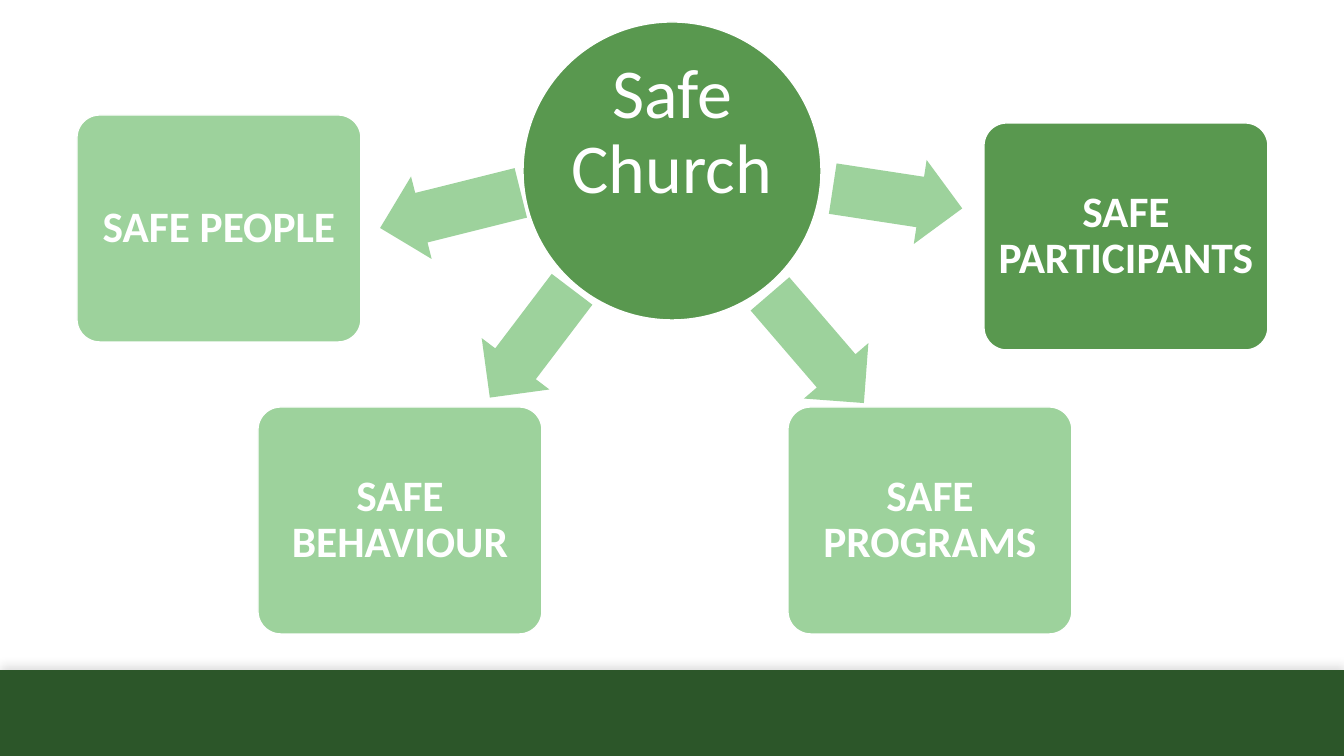
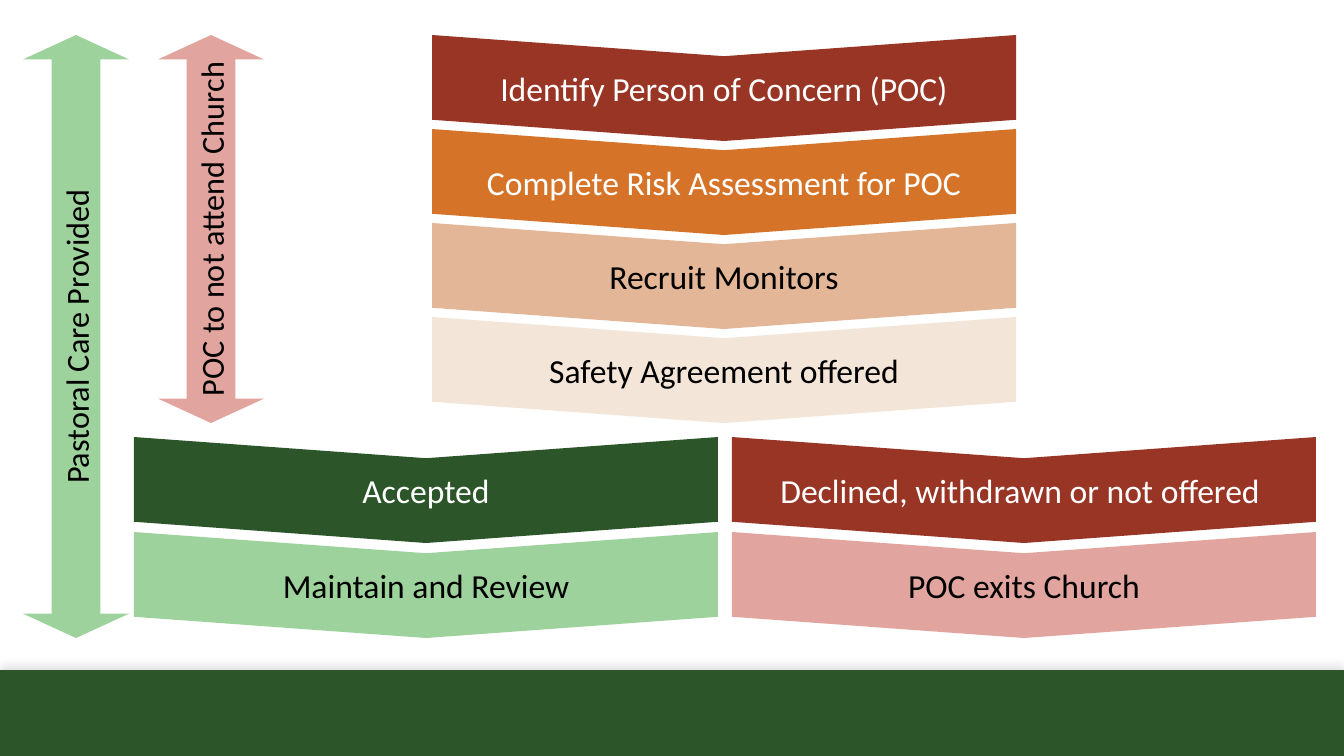
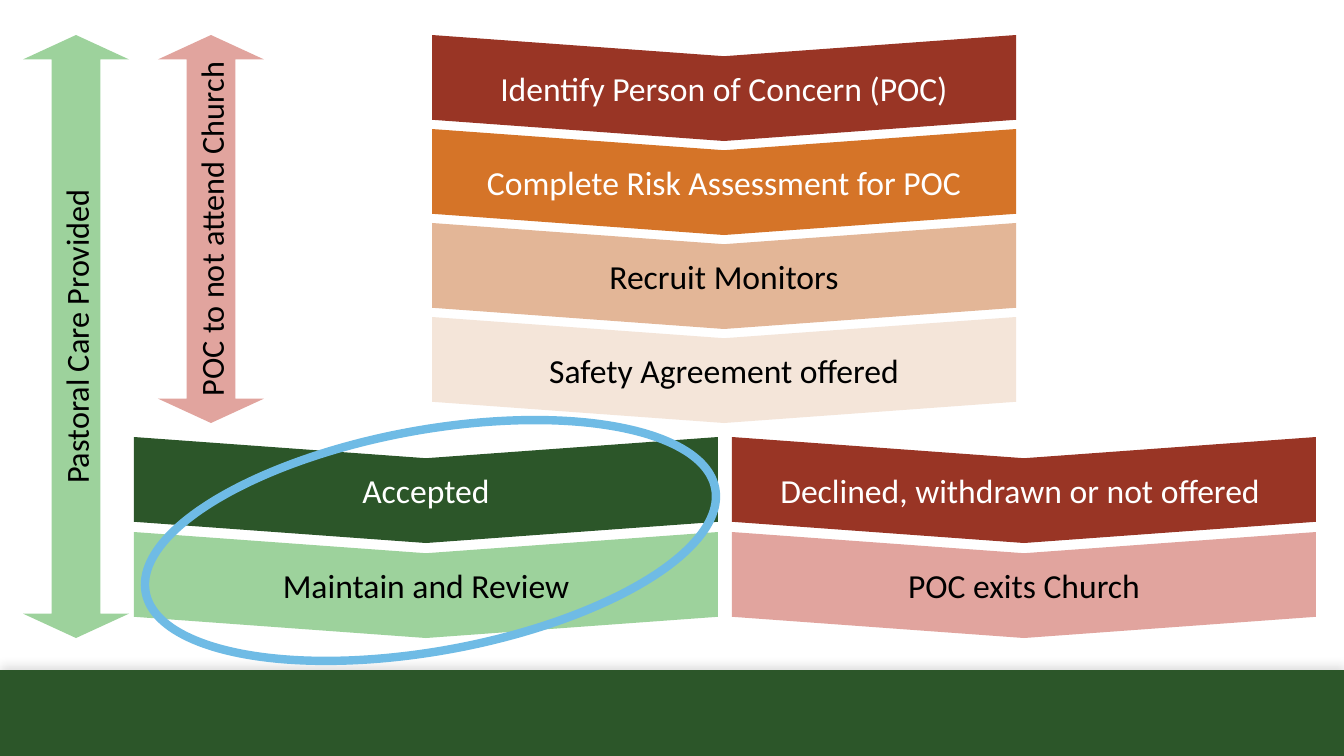
import pptx
import pptx.dml.color
import pptx.enum.shapes
import pptx.enum.text
import pptx.oxml
import pptx.oxml.ns
import pptx.util

RGBColor = pptx.dml.color.RGBColor
SHAPE = pptx.enum.shapes.MSO_SHAPE
Pt = pptx.util.Pt

WHITE = RGBColor(0xFF, 0xFF, 0xFF)
BLACK = RGBColor(0x00, 0x00, 0x00)
FOREST = RGBColor(0x2C, 0x56, 0x29)
GREEN = RGBColor(0x59, 0x98, 0x4F)
MINT = RGBColor(0x9D, 0xD2, 0x9C)
RED = RGBColor(0x99, 0x35, 0x25)
PINK = RGBColor(0xE1, 0xA4, 0x9E)
ORANGE = RGBColor(0xD5, 0x74, 0x28)
TAN = RGBColor(0xE3, 0xB6, 0x97)
CREAM = RGBColor(0xF4, 0xE5, 0xD9)
SKY = RGBColor(0x6F, 0xBB, 0xE5)

FONT = "Calibri"
WIDTH, HEIGHT = 1344, 756
SCALE = 12192000 / WIDTH

BAND = (0, 670, WIDTH, 86)
BAND_SHADOW = (
    '<a:outerShdw xmlns:a="http://schemas.openxmlformats.org/drawingml/2006/main"'
    ' blurRad="88900" dist="38100" dir="16200000" rotWithShape="0">'
    '<a:srgbClr val="000000"><a:alpha val="13000"/></a:srgbClr></a:outerShdw>'
)

HUB = ("Safe Church", (523, 22, 298, 298))
HUB_INSETS = (3, 3, 3, 78)
CARD_SIZE = (284, 227)
CARD_INSETS = (6, 6, 6, 6)
CARDS = [
    ("SAFE PEOPLE", (77, 115), MINT),
    ("SAFE BEHAVIOUR", (258, 407), MINT),
    ("SAFE PROGRAMS", (788, 407), MINT),
    ("SAFE PARTICIPANTS", (984, 123), GREEN),
]
SPOKE_HEIGHT = 85
SPOKES = [
    (378, 168, 145, 346),
    (463, 301, 136, 307.2),
    (745, 306, 144, 229.3),
    (832, 156, 131, 188.7),
]

STEP_SIZE = (584, 106)
STEP_COLUMNS = [
    (432, 35, 94, [
        ("Identify Person of Concern (POC)", RED, WHITE),
        ("Complete Risk Assessment for POC", ORANGE, WHITE),
        ("Recruit Monitors", TAN, BLACK),
        ("Safety Agreement offered", CREAM, BLACK),
    ]),
    (134, 437, 95, [
        ("Accepted", FOREST, WHITE),
        ("Maintain and Review", MINT, BLACK),
    ]),
    (732, 437, 95, [
        ("Declined, withdrawn or not offered ", RED, WHITE),
        ("POC exits Church", PINK, BLACK),
    ]),
]
SPANS = [
    ("POC to not attend Church", (158, 35, 106, 388), PINK),
    ("Pastoral Care Provided", (23, 35, 106, 603), MINT),
]
RING = (141, 430, 579, 221)


def px(n):
    return round(n * SCALE)


def add_shape(slide, kind, box, fill=None, line=None, line_pt=1, rotation=0, adj=()):
    sp = slide.shapes.add_shape(kind, *map(px, box))
    sp.shadow.inherit = False
    sp.rotation = rotation
    for i, value in enumerate(adj):
        sp.adjustments[i] = value
    if fill is None:
        sp.fill.background()
    else:
        sp.fill.solid()
        sp.fill.fore_color.rgb = fill
    if line is None:
        sp.line.fill.background()
    else:
        sp.line.color.rgb = line
        sp.line.width = Pt(line_pt)
    return sp


def add_text(sp, text, size, color, bold=False, spacing=None, insets=None):
    tf = sp.text_frame
    frame = {"word_wrap": True, "vertical_anchor": pptx.enum.text.MSO_ANCHOR.MIDDLE}
    if insets:
        sides = ("margin_left", "margin_top", "margin_right", "margin_bottom")
        frame.update(zip(sides, map(px, insets)))
    p = tf.paragraphs[0]
    r = p.add_run()
    r.text = text
    formats = [
        (tf, frame),
        (p, {"alignment": pptx.enum.text.PP_ALIGN.CENTER, "line_spacing": spacing}),
        (r.font, {"name": FONT, "size": Pt(size), "bold": bold}),
    ]
    for target, values in formats:
        for name, value in values.items():
            setattr(target, name, value)
    r.font.color.rgb = color


def turned(box):
    x, y, w, h = box
    return x + (w - h) / 2, y + (h - w) / 2, h, w


def move_band_to_layout(slide, layout):
    for placeholder in list(layout.placeholders):
        layout.shapes.element.remove(placeholder.element)
    sp = add_shape(slide, SHAPE.RECTANGLE, BAND, FOREST)
    effects = sp.element.spPr.find(pptx.oxml.ns.qn("a:effectLst"))
    effects.append(pptx.oxml.parse_xml(BAND_SHADOW))
    layout.shapes.element.append(sp.element)


def draw_wheel(slide):
    text, box = HUB
    sp = add_shape(slide, SHAPE.OVAL, box, GREEN, WHITE)
    add_text(sp, text, 50, WHITE, spacing=0.9, insets=HUB_INSETS)
    for x, y, w, rotation in SPOKES:
        add_shape(slide, SHAPE.LEFT_ARROW, (x, y, w, SPOKE_HEIGHT), MINT,
                  rotation=rotation, adj=(0.6, 0.5))
    for text, place, fill in CARDS:
        sp = add_shape(slide, SHAPE.ROUNDED_RECTANGLE, place + CARD_SIZE, fill,
                       WHITE, adj=(0.1,))
        add_text(sp, text, 31, WHITE, True, 0.9, CARD_INSETS)


def draw_process(slide):
    for x, top, pitch, steps in STEP_COLUMNS:
        for i, (text, fill, color) in enumerate(steps):
            box = turned((x, top + i * pitch) + STEP_SIZE)
            sp = add_shape(slide, SHAPE.CHEVRON, box, fill, rotation=90, adj=(0.2,))
            add_text(sp, text, 24, color)
            body = sp.text_frame._txBody.find(pptx.oxml.ns.qn("a:bodyPr"))
            body.set("vert", "vert270")
    for text, box, fill in SPANS:
        sp = add_shape(slide, SHAPE.LEFT_RIGHT_ARROW, turned(box), fill,
                       rotation=270, adj=(0.46, 0.23))
        add_text(sp, text, 23, BLACK)


def main():
    prs = pptx.Presentation()
    prs.slide_width, prs.slide_height = px(WIDTH), px(HEIGHT)
    layout = prs.slide_layouts[6]
    wheel, process, review = [prs.slides.add_slide(layout) for _ in range(3)]
    move_band_to_layout(wheel, layout)
    draw_wheel(wheel)
    for slide in (process, review):
        draw_process(slide)
    add_shape(review, SHAPE.OVAL, RING, line=SKY, line_pt=6, rotation=349.7)
    prs.save("out.pptx")


if __name__ == "__main__":
    main()
